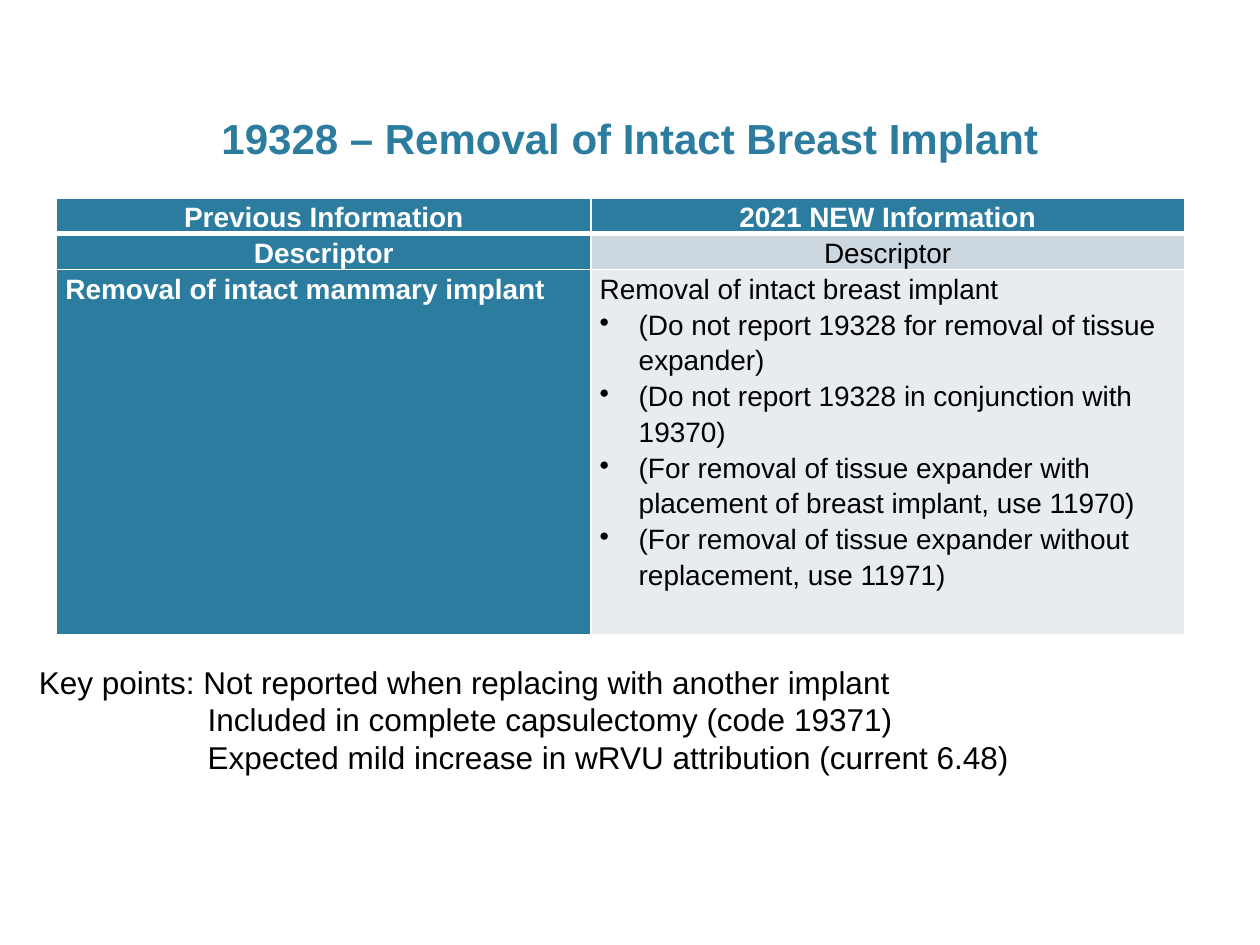
import pptx
import pptx.util
import pptx.dml.color
import pptx.enum.text
import pptx.oxml
import pptx.oxml.ns
from pptx.util import Inches

TEAL, WHITE, BLACK = "2C7C9F", "FFFFFF", "000000"
ALIGN = pptx.enum.text.PP_ALIGN


def format_runs(para, size, color, bold=False):
    for span in para.runs:
        span.font.name = "Arial"
        span.font.size = pptx.util.Pt(size)
        span.font.bold = bold
        span.font.color.rgb = pptx.dml.color.RGBColor.from_string(color)


def add_xml(parent, index, xml):
    """Insert a drawing element, written without its namespace, at index."""
    name, rest = xml.split(" ", 1)
    namespace = pptx.oxml.ns.nsdecls("a")
    parent.insert(index, pptx.oxml.parse_xml(f"{name} {namespace} {rest}"))


deck = pptx.Presentation()
deck.slide_width, deck.slide_height = Inches(10), Inches(7.5)
page = deck.slides.add_slide(deck.slide_layouts[5])

# Title
title = page.shapes.title
title.left, title.top = Inches(0.6), Inches(0.33)
title.width, title.height = Inches(8.8), Inches(1.01)
title.text_frame.text = "19328 – Removal of Intact Breast Implant"
title.text_frame.vertical_anchor = pptx.enum.text.MSO_ANCHOR.BOTTOM
title.text_frame.paragraphs[0].alignment = ALIGN.CENTER
format_runs(title.text_frame.paragraphs[0], 24, TEAL, True)

# Comparison table
rows = [
    ["Previous Information", "2021 NEW Information"],
    ["Descriptor", "Descriptor"],
    ["Removal of intact mammary implant", "\n".join([
        "Removal of intact breast implant",
        "(Do not report 19328 for removal of tissue expander)",
        "(Do not report 19328 in conjunction with 19370)",
        "(For removal of tissue expander with placement of breast implant, use 11970)",
        "(For removal of tissue expander without replacement, use 11971)",
    ])],
]
new_fills = [TEAL, "CDD7DF", "E8ECF0"]

table = page.shapes.add_table(
    3, 2, Inches(0.45), Inches(1.57), Inches(8.95), Inches(3.44)).table
for column, width in zip(table.columns, [4.24, 4.71]):
    column.width = Inches(width)
for row, height in zip(table.rows, [0.27, 0.27, 2.9]):
    row.height = Inches(height)

for r, texts in enumerate(rows):
    for c, text in enumerate(texts):
        cell = table.cell(r, c)
        fill = new_fills[r] if c == 1 else TEAL
        cell.fill.solid()
        cell.fill.fore_color.rgb = pptx.dml.color.RGBColor.from_string(fill)
        cell.margin_left = cell.margin_right = Inches(0.07)
        cell.margin_top = cell.margin_bottom = 0

        thick_side = {0: "B", 1: "T"}.get(r)
        for index, side in enumerate("LRTB"):
            points = 3 if side == thick_side else 1
            add_xml(cell._tc.get_or_add_tcPr(), index,
                    f'<a:ln{side} w="{pptx.util.Pt(points)}"><a:solidFill>'
                    f'<a:srgbClr val="{WHITE}"/></a:solidFill></a:ln{side}>')

        cell.text_frame.text = text
        on_teal = fill == TEAL
        for number, para in enumerate(cell.text_frame.paragraphs):
            para.alignment = ALIGN.CENTER if r < 2 else ALIGN.LEFT
            if number > 0:
                properties = para._p.get_or_add_pPr()
                properties.set("marL", str(Inches(0.31)))
                properties.set("indent", str(Inches(-0.31)))
                add_xml(properties, 0, '<a:buChar char="•"/>')
            para.line_spacing = 1.15
            format_runs(para, 16, WHITE if on_teal else BLACK, on_teal)

# Key points, with the later lines aligned under the first statement
key_points = page.shapes.add_textbox(
    Inches(0.21), Inches(5.21), Inches(9.79), Inches(1.31)).text_frame
key_points.word_wrap = True
key_points.text = "\n".join([
    "Key points: Not reported when replacing with another implant",
    "Included in complete capsulectomy (code 19371)",
    "Expected mild increase in wRVU attribution (current 6.48)",
])
for number, para in enumerate(key_points.paragraphs):
    if number > 0:
        para._p.get_or_add_pPr().set("marL", str(Inches(1.34)))
    format_runs(para, 18, BLACK)

deck.save("out.pptx")
